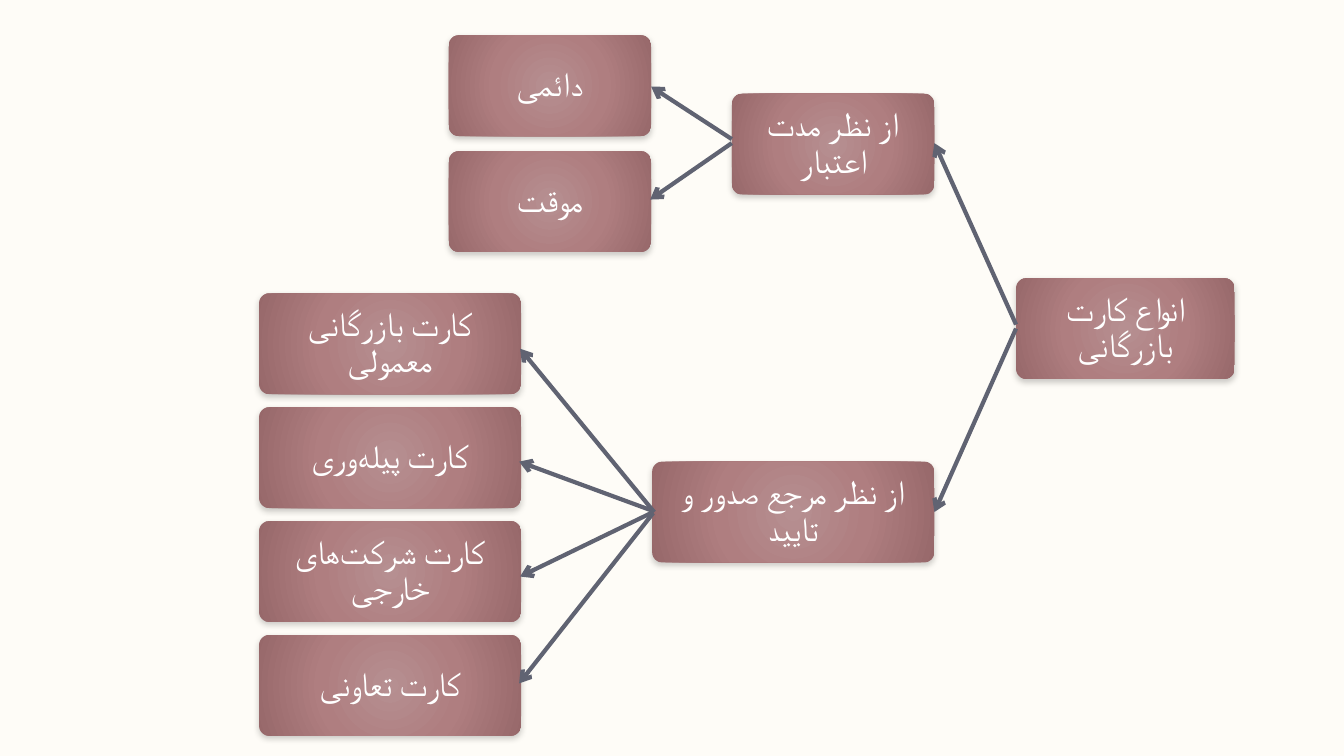
import pptx
import pptx.dml.color
import pptx.enum.shapes
import pptx.enum.text
import pptx.oxml
import pptx.oxml.ns
import pptx.util
from dataclasses import dataclass

PX = 9144
BOX_HEIGHT = 100
HALF_SPACE = chr(0x200C)


@dataclass(frozen=True)
class Theme:
    background: str = "FEFCF7"
    box_stops: tuple = ((0, "B68F91"), (50, "AF7E80"), (100, "97686A"))
    arrow: str = "606372"
    shadow: str = "000000"
    text: str = "FFFFFF"
    font: str = "Calibri"
    text_size: int = 24
    arrow_width: int = 3


THEME = Theme()

DURATION_LEAVES = ["دائمی", "موقت"]
AUTHORITY_LEAVES = [
    "کارت بازرگانی معمولی",
    f"کارت پیله{HALF_SPACE}وری",
    f"کارت شرکت{HALF_SPACE}های خارجی",
    "کارت تعاونی",
]

ARROWS = [
    (649, 508, 516, 346),
    (648, 507, 515, 458),
    (648, 508, 516, 572),
    (648, 509, 515, 678),
    (1008, 322, 927, 142),
    (1008, 326, 927, 508),
    (726, 138, 646, 86),
    (726, 142, 645, 198),
]


def px(*values):
    return [pptx.util.Emu(v * PX) for v in values]


def rgb(value):
    return pptx.dml.color.RGBColor.from_string(value)


def element(tag, body="", **attrs):
    ns = pptx.oxml.ns.nsdecls("a")
    listed = " ".join(f'{k}="{v}"' for k, v in attrs.items())
    return pptx.oxml.parse_xml(f"<a:{tag} {ns} {listed}>{body}</a:{tag}>")


def add_text(sp, text, *, size, color, font, line_spacing=0.9, after=35, inset=5):
    tf = sp.text_frame
    tf.word_wrap = True
    tf.vertical_anchor = pptx.enum.text.MSO_ANCHOR.MIDDLE
    margin, = px(inset)
    tf.margin_left = tf.margin_right = tf.margin_top = tf.margin_bottom = margin
    p = tf.paragraphs[0]
    p.alignment = pptx.enum.text.PP_ALIGN.CENTER
    p.line_spacing = line_spacing
    pPr = p._p.get_or_add_pPr()
    pPr.set("rtl", "1")
    pPr.append(element("spcAft", f'<a:spcPct val="{after * 1000}"/>'))
    r = p.add_run()
    r.text = text
    r.font.size = pptx.util.Pt(size)
    r.font.name = font
    r.font.color.rgb = rgb(color)
    r._r.get_or_add_rPr().append(element("cs", typeface=font))


def fill_radial(sp, stops):
    gs = "".join(
        f'<a:gs pos="{pos * 1000}"><a:srgbClr val="{color}"/></a:gs>'
        for pos, color in stops
    )
    edge = 'l="100000" t="100000" r="100000" b="100000"'
    body = f'<a:gsLst>{gs}</a:gsLst><a:path path="circle"><a:fillToRect {edge}/></a:path>'
    sp.line._get_or_add_ln().addprevious(element("gradFill", body, rotWithShape=1))


def add_shadow(sp, color):
    sp.shadow.inherit = False
    effects = sp._element.spPr.find(pptx.oxml.ns.qn("a:effectLst"))
    effects.append(element(
        "outerShdw",
        f'<a:srgbClr val="{color}"><a:alpha val="20000"/></a:srgbClr>',
        blurRad=pptx.util.Pt(4.5), dist=pptx.util.Pt(2), dir=5400000, rotWithShape=0,
    ))


def add_box(slide, text, left, top, width):
    sp = slide.shapes.add_shape(
        pptx.enum.shapes.MSO_SHAPE.ROUNDED_RECTANGLE,
        *px(left, top, width, BOX_HEIGHT),
    )
    sp.adjustments[0] = 0.1
    sp.line.fill.background()
    fill_radial(sp, THEME.box_stops)
    add_shadow(sp, THEME.shadow)
    add_text(sp, text, size=THEME.text_size, color=THEME.text, font=THEME.font)


def add_column(slide, texts, left, top, width, step):
    for i, text in enumerate(texts):
        add_box(slide, text, left, top + i * step, width)


def add_arrow(slide, x1, y1, x2, y2):
    line = slide.shapes.add_connector(
        pptx.enum.shapes.MSO_CONNECTOR.STRAIGHT, *px(x1, y1, x2, y2)
    )
    line.line.color.rgb = rgb(THEME.arrow)
    line.line.width = pptx.util.Pt(THEME.arrow_width)
    line.line._get_or_add_ln().append(element("tailEnd", type="arrow"))
    line._element.spPr.append(element("effectLst"))


def main():
    prs = pptx.Presentation()
    prs.slide_width = pptx.util.Emu(12192000)
    prs.slide_height = pptx.util.Emu(6858000)
    slide = prs.slides.add_slide(prs.slide_layouts[6])
    slide.background.fill.solid()
    slide.background.fill.fore_color.rgb = rgb(THEME.background)

    add_box(slide, "انواع کارت بازرگانی", 1008, 276, 217)
    add_box(slide, "از نظر مدت اعتبار", 726, 93, 201)
    add_column(slide, DURATION_LEAVES, 445, 35, 201, 115)
    add_box(slide, "از نظر مرجع صدور و تایید", 647, 458, 280)
    add_column(slide, AUTHORITY_LEAVES, 257, 291, 260, 113)
    for ends in ARROWS:
        add_arrow(slide, *ends)

    prs.save("out.pptx")


if __name__ == "__main__":
    main()
